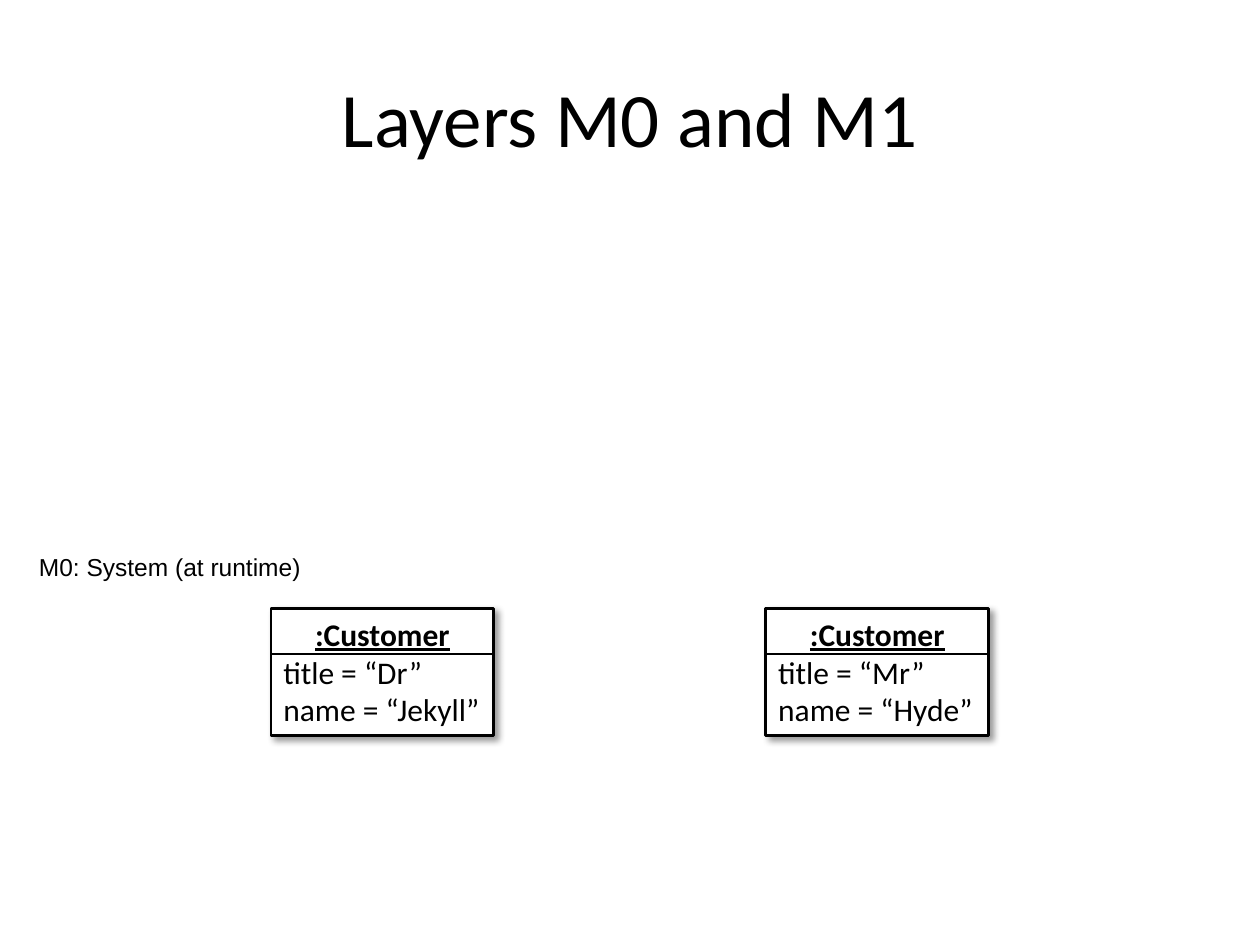
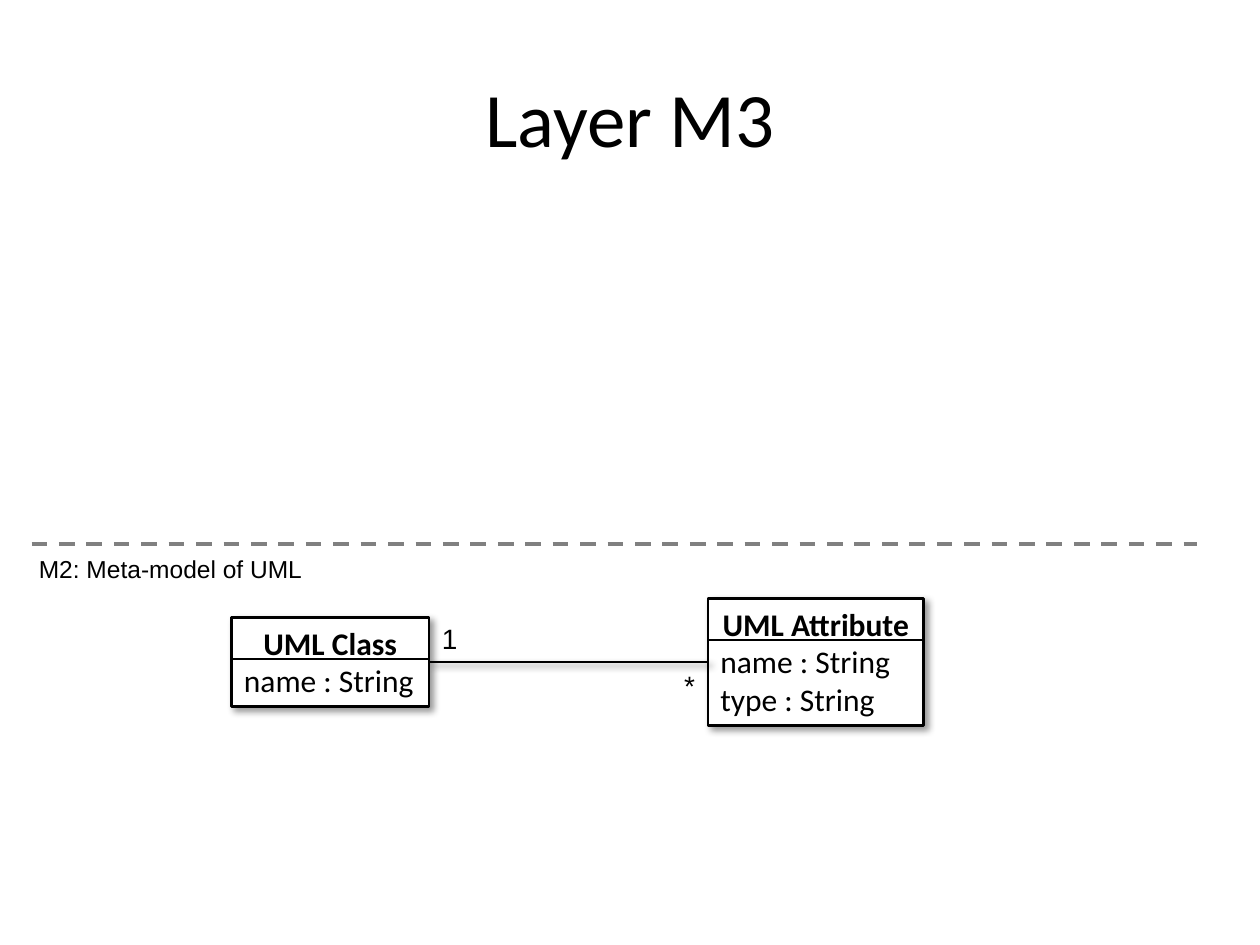
"""Build two slides on the UML meta-model layers."""
from dataclasses import dataclass

from lxml.etree import SubElement
from pptx import Presentation
from pptx.dml.color import RGBColor as Color
from pptx.enum.dml import MSO_LINE_DASH_STYLE as Dash
from pptx.enum.shapes import MSO_CONNECTOR as Connector, MSO_SHAPE as Shape
from pptx.enum.text import MSO_ANCHOR as Anchor, MSO_AUTO_SIZE as AutoSize, PP_ALIGN as Align
from pptx.oxml.ns import qn
from pptx.util import Pt

SLIDES = [
    dict(title="Layers M0 and M1", layer="M0: System (at runtime)",
         layer_place=(15.1, 311.8, 164.9, 24.5), border=None,
         center=384.1, header=26, underline=True,
         classes=[(154.8, 127.4, [":Customer", "title = “Dr”", "name = “Jekyll”"]),
                  (437.6, 127.4, [":Customer", "title = “Mr”", "name = “Hyde”"])],
         multiplicities=[]),
    dict(title="Layer M3", layer="M2: Meta-model of UML",
         layer_place=(15.1, 313.2, 165.6, 24.5), border=(18, 684, 311),
         center=378.3, header=23.8, underline=False,
         classes=[(132.3, 112.8, ["UML Class", "name : String"]),
                  (404.6, 123.2, ["UML Attribute", "name : String", "type : String"])],
         multiplicities=[("*", (383.8, 378.3, 20.9, 26.6)),
                         ("1", (245.5, 351.4, 23.8, 26.6))]),
]
LINE_HEIGHT, BOX_MARGIN = 21.6, 7.9


@dataclass(frozen=True)
class Theme:
    """Colours, fonts and sizes shared by the slides."""
    ink: Color = Color(0, 0, 0)
    paper: Color = Color(255, 255, 255)
    border: Color = Color(128, 128, 128)
    heading: str = "Calibri"
    label: str = "Arial"
    title_size: float = 44
    class_size: float = 18
    layer_size: float = 14
    multiplicity_size: float = 16
    stroke: float = 1.5
    border_stroke: float = 2.25


THEME = Theme()


def points(values):
    """Turn plain numbers into lengths."""
    return [Pt(value) for value in values]


def assign(target, **values):
    """Set each named attribute on the target."""
    for name, value in values.items():
        setattr(target, name, value)


def write(para, text, font, size, **extra):
    """Write one formatted run in a paragraph."""
    span = para.add_run()
    span.text = text
    assign(span.font, name=font, size=Pt(size), **extra)
    span.font.color.rgb = THEME.ink


def add_shadow(effects):
    """Put a soft lower-right shadow into an effect list."""
    outer = SubElement(effects, qn("a:outerShdw"), blurRad=str(Pt(4)), dist=str(Pt(3)),
                       dir="2700000", algn="tl", rotWithShape="0")
    color = SubElement(outer, qn("a:srgbClr"), val=str(THEME.ink))
    SubElement(color, qn("a:alpha"), val="40000")


def add_line(page, start, end, color=THEME.ink, width=THEME.stroke, dash=None, shadow=False):
    """Draw a straight line."""
    line = page.shapes.add_connector(Connector.STRAIGHT, *points(start + end))
    line.line.color.rgb = color
    assign(line.line, width=Pt(width), dash_style=dash)
    effects = SubElement(line._element.spPr, qn("a:effectLst"))
    if shadow:
        add_shadow(effects)
    return line


def add_label(page, text, place, size):
    """Add a one-line label."""
    frame = page.shapes.add_textbox(*points(place)).text_frame
    assign(frame, word_wrap=False, auto_size=AutoSize.SHAPE_TO_FIT_TEXT)
    write(frame.paragraphs[0], text, THEME.label, size)


def add_class(page, left, width, rows, center, header, underline):
    """Draw a UML box with a name row above its attributes."""
    height = LINE_HEIGHT * len(rows) + BOX_MARGIN
    top = center - height / 2
    box = page.shapes.add_shape(Shape.RECTANGLE, *points((left, top, width, height)))
    box.fill.solid()
    box.fill.fore_color.rgb = THEME.paper
    box.line.color.rgb = THEME.ink
    box.line.width = Pt(THEME.stroke)
    box.shadow.inherit = False
    add_shadow(box._element.spPr.find(qn("a:effectLst")))
    frame = box.text_frame
    assign(frame, word_wrap=False, auto_size=AutoSize.SHAPE_TO_FIT_TEXT,
           vertical_anchor=Anchor.TOP)
    for index, text in enumerate(rows):
        is_name = index == 0
        para = frame.paragraphs[0] if is_name else frame.add_paragraph()
        para.alignment = Align.CENTER if is_name else Align.LEFT
        write(para, text, THEME.heading, THEME.class_size,
              bold=is_name, underline=is_name and underline)
    add_line(page, (left, top + header), (left + width, top + header))
    return box


def add_slide(deck, content):
    """Build one slide from its content."""
    page = deck.slides.add_slide(deck.slide_layouts[5])
    title = page.shapes.title
    assign(title, left=Pt(36), top=Pt(21.6), width=Pt(648), height=Pt(90))
    title.text_frame.vertical_anchor = Anchor.MIDDLE
    para = title.text_frame.paragraphs[0]
    para.alignment = Align.CENTER
    write(para, content["title"], THEME.heading, THEME.title_size)
    if content["border"]:
        left, right, level = content["border"]
        add_line(page, (left, level), (right, level), THEME.border,
                 THEME.border_stroke, Dash.DASH)
    add_label(page, content["layer"], content["layer_place"], THEME.layer_size)
    boxes = [add_class(page, *entry, content["center"], content["header"], content["underline"])
             for entry in content["classes"]]
    if content["multiplicities"]:
        first, second = boxes
        link = add_line(page, (0, 0), (0, 0), shadow=True)
        link.begin_connect(first, 3)
        link.end_connect(second, 1)
    for text, place in content["multiplicities"]:
        add_label(page, text, place, THEME.multiplicity_size)


def main():
    """Build and save the deck."""
    deck = Presentation()
    assign(deck, slide_width=Pt(720), slide_height=Pt(540))
    for content in SLIDES:
        add_slide(deck, content)
    deck.save("out.pptx")


if __name__ == "__main__":
    main()
